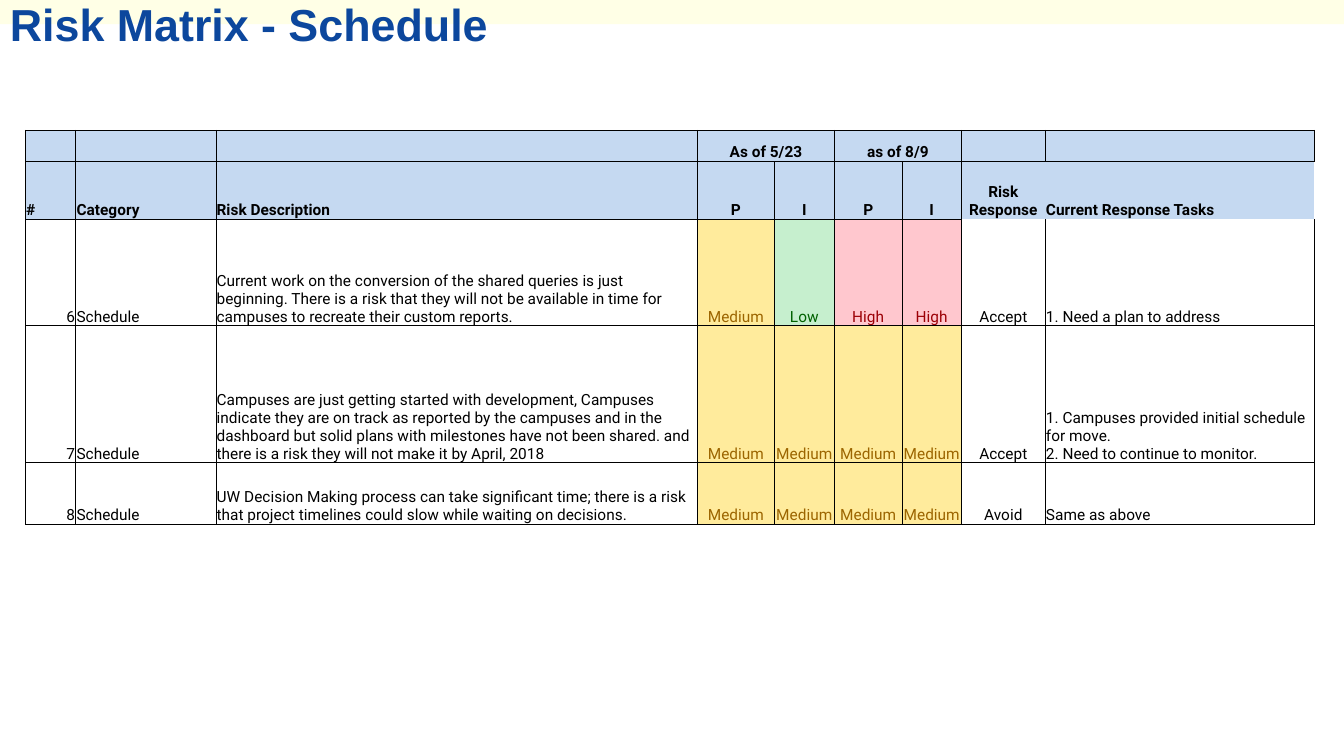
from dataclasses import dataclass

from lxml.etree import SubElement
from pptx import Presentation
from pptx.dml.color import RGBColor
from pptx.enum.shapes import MSO_SHAPE
from pptx.enum.text import MSO_ANCHOR, PP_ALIGN as Align
from pptx.oxml.ns import qn
from pptx.util import Cm, Pt


@dataclass(frozen=True)
class Theme:
    title_font: str = "Arial"
    table_font: str = "Roboto"
    title_size: int = 32
    table_size: int = 11
    border_width: float = 0.5
    title: str = "0C479D"
    banner: str = "FFFFE6"
    header: str = "C5D9F1"
    text: str = "000000"


THEME = Theme()
# Rating: (text colour, fill colour)
RATINGS = {
    "Low": ("006100", "C6EFCE"),
    "Medium": ("9C6500", "FFEB9C"),
    "High": ("9C0006", "FFC7CE"),
}
COLUMN_WIDTHS = [1.27, 3.53, 12.14, 1.93, 1.52, 1.7, 1.5, 2.11, 6.78]
ROW_HEIGHTS = [0.79, 1.45, 2.69, 3.45, 1.55]
HEADER_ROWS = 2
CENTERED_COLUMNS = range(3, 8)
PERIOD_COLUMNS = [3, 5]
RISK_ROWS = [
    ["", "", "", "As of 5/23", "", "as of 8/9", "", "", ""],
    ["#", "Category", "Risk Description", "P", "I", "P", "I",
     "Risk Response", "Current Response Tasks"],
    ["6", "Schedule",
     "Current work on the conversion of the shared queries is just beginning. "
     "There is a risk that they will not be available in time for campuses "
     "to recreate their custom reports.",
     "Medium", "Low", "High", "High", "Accept", "1. Need a plan to address"],
    ["7", "Schedule",
     "Campuses are just getting started with development, Campuses indicate "
     "they are on track as reported by the campuses and in the dashboard but "
     "solid plans with milestones have not been shared. and there is a risk "
     "they will not make it by April, 2018",
     "Medium", "Medium", "Medium", "Medium", "Accept",
     "1. Campuses provided initial schedule for move.\n"
     "2. Need to continue to monitor."],
    ["8", "Schedule",
     "UW Decision Making process can take significant time; there is a risk "
     "that project timelines could slow while waiting on decisions.",
     "Medium", "Medium", "Medium", "Medium", "Avoid", "Same as above"],
]
# Sides drawn, where a cell lacks the full frame
PARTIAL_BORDERS = {(1, 7): "LT", (1, 8): "T", (2, 7): "LRB", (2, 8): "LRB"}


def rgb(color):
    return RGBColor.from_string(color)


def style_font(font, name, size, color, bold):
    font.name = name
    font.size = Pt(size)
    font.bold = bold
    font.color.rgb = rgb(color)


def add_banner(slide, width):
    banner = slide.shapes.add_shape(MSO_SHAPE.RECTANGLE, 0, 0, width, Cm(0.61))
    banner.shadow.inherit = False
    banner.fill.solid()
    banner.fill.fore_color.rgb = rgb(THEME.banner)
    banner.line.fill.background()


def add_title(slide, text):
    title = slide.shapes.add_textbox(0, 0, Cm(30.15), Cm(1.45))
    title.text_frame.word_wrap = True
    title.text_frame.text = text
    paragraph = title.text_frame.paragraphs[0]
    paragraph.line_spacing = 0.85
    style_font(paragraph.runs[0].font, THEME.title_font, THEME.title_size,
               THEME.title, True)


def set_borders(cell, sides):
    """Draw the given sides (of L, R, T, B) and clear the others."""
    properties = cell._tc.get_or_add_tcPr()
    for side in "LRTB":
        line = SubElement(properties, qn(f"a:ln{side}"),
                          w=str(Pt(THEME.border_width)))
        if side in sides:
            fill = SubElement(line, qn("a:solidFill"))
            SubElement(fill, qn("a:srgbClr"), val=THEME.text)
        else:
            SubElement(line, qn("a:noFill"))


def set_fill(cell, color):
    if color:
        cell.fill.solid()
        cell.fill.fore_color.rgb = rgb(color)
    else:
        cell.fill.background()


def write_cell(cell, text, alignment, color, bold):
    cell.margin_left = cell.margin_right = cell.margin_top = Cm(0.02)
    cell.margin_bottom = 0
    cell.vertical_anchor = MSO_ANCHOR.BOTTOM
    cell.text_frame.text = text
    for paragraph in cell.text_frame.paragraphs:
        paragraph.alignment = alignment
        for run in paragraph.runs:
            style_font(run.font, THEME.table_font, THEME.table_size, color, bold)
        if not paragraph.runs:
            end = paragraph._p.get_or_add_endParaRPr()
            end.set("sz", str(THEME.table_size * 100))


def cell_alignment(row, column):
    if column in CENTERED_COLUMNS:
        return Align.CENTER
    if column == 0 and row >= HEADER_ROWS:
        return Align.RIGHT
    return Align.LEFT


def add_risk_table(slide):
    frame = slide.shapes.add_table(
        len(ROW_HEIGHTS), len(COLUMN_WIDTHS), Cm(0.64), Cm(3.28),
        Cm(sum(COLUMN_WIDTHS)), Cm(sum(ROW_HEIGHTS)))
    table = frame.table
    table.first_row = table.horz_banding = False
    for column, width in zip(table.columns, COLUMN_WIDTHS):
        column.width = Cm(width)
    for row, height in zip(table.rows, ROW_HEIGHTS):
        row.height = Cm(height)
    for column in PERIOD_COLUMNS:
        table.cell(0, column).merge(table.cell(0, column + 1))

    for row, texts in enumerate(RISK_ROWS):
        is_header = row < HEADER_ROWS
        default_fill = THEME.header if is_header else None
        for column, text in enumerate(texts):
            color, fill = RATINGS.get(text, (THEME.text, default_fill))
            cell = table.cell(row, column)
            set_borders(cell, PARTIAL_BORDERS.get((row, column), "LRTB"))
            set_fill(cell, fill)
            write_cell(cell, text, cell_alignment(row, column), color, is_header)


def main():
    presentation = Presentation()
    presentation.slide_width = Cm(33.87)
    presentation.slide_height = Cm(19.05)
    slide = presentation.slides.add_slide(presentation.slide_layouts[6])
    add_banner(slide, presentation.slide_width)
    add_title(slide, "Risk Matrix - Schedule")
    add_risk_table(slide)
    presentation.save("out.pptx")


if __name__ == "__main__":
    main()
